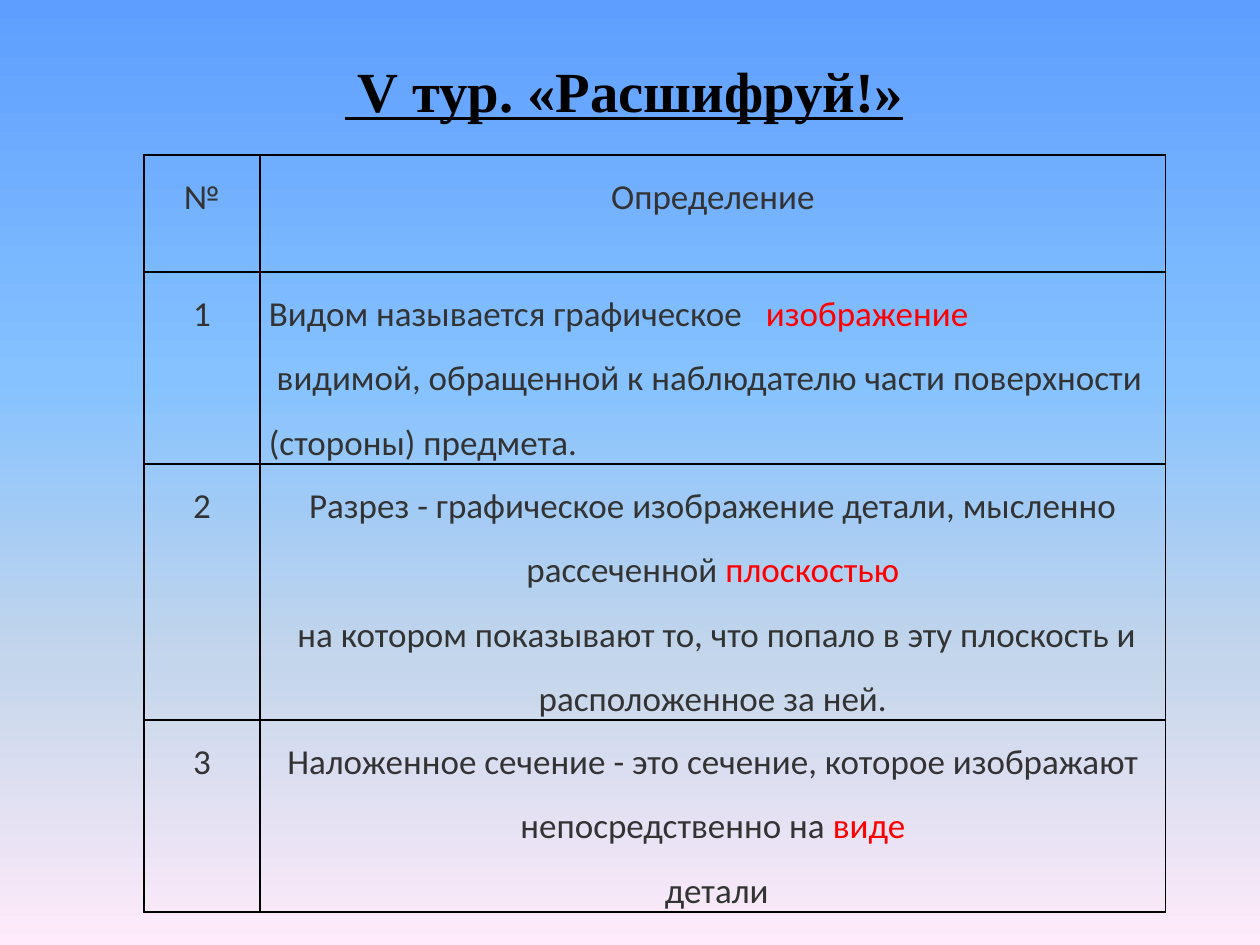
import pptx
import pptx.util
import pptx.dml.color
import pptx.enum.text
import pptx.oxml.ns
import lxml.etree

Cm, Pt = pptx.util.Cm, pptx.util.Pt
RGB = pptx.dml.color.RGBColor
ALIGN = pptx.enum.text.PP_ALIGN
ANCHOR = pptx.enum.text.MSO_ANCHOR
qn = pptx.oxml.ns.qn

BLACK = RGB(0x00, 0x00, 0x00)
GREY = RGB(0x33, 0x33, 0x33)
RED = RGB(0xFF, 0x00, 0x00)
SKY = [(0, RGB(0x5E, 0x9E, 0xFF)), (40, RGB(0x85, 0xC2, 0xFF)),
       (70, RGB(0xC4, 0xD6, 0xEB)), (100, RGB(0xFF, 0xEB, 0xFA))]

HEAD = {"name": "Times New Roman", "size": Pt(32.4), "bold": True, "underline": True}
BODY = {"name": "Calibri", "size": Pt(20)}
BLANK = {**BODY, "underline": True}

LINE = 1.29  # height of one line of text in the table, cm
MID, LEFT = ALIGN.CENTER, ALIGN.LEFT

# Each row: number of lines, then paragraphs of (align, tab stop, runs).
ROWS = [
    ("1", 3, [
        (LEFT, 10.02, [("Видом называется графическое\t", GREY, BODY),
                       ("изображение", RED, BODY)]),
        (LEFT, 9.74, [(" видимой, обращенной к наблюдателю части поверхности "
                       "(стороны) предмета. ", GREY, BODY),
                      ("\t", GREY, BLANK)])]),
    ("2", 4, [
        (MID, None, [("Разрез - графическое изображение детали, мысленно "
                      "рассеченной ", GREY, BODY),
                     ("плоскостью", RED, BODY)]),
        (MID, None, [(" на котором показывают то, что попало в эту плоскость и "
                      "расположенное за ней.", GREY, BODY)])]),
    ("3", 3, [
        (MID, None, [("Наложенное сечение - это сечение, которое изображают "
                      "непосредственно на ", GREY, BODY),
                     ("виде", RED, BODY)]),
        (MID, None, [(" детали", GREY, BODY)])]),
]


def put(obj, vals):
    for key, val in vals.items():
        setattr(obj, key, val)


def add_run(para, text, color, font):
    run = para.add_run()
    run.text = text
    put(run.font, font)
    run.font.color.rgb = color


def add_tab(para, stop):
    tabs = lxml.etree.SubElement(para._p.get_or_add_pPr(), qn("a:tabLst"))
    lxml.etree.SubElement(tabs, qn("a:tab"), pos=str(Cm(stop)), algn="l")


def add_edges(cell):
    """Draw a thin black line on all four sides of the cell."""
    props = cell._tc.get_or_add_tcPr()
    for i, side in enumerate(("a:lnL", "a:lnR", "a:lnT", "a:lnB")):
        edge = props.makeelement(qn(side), {"w": str(Pt(1))})
        fill = lxml.etree.SubElement(edge, qn("a:solidFill"))
        lxml.etree.SubElement(fill, qn("a:srgbClr"), val=str(BLACK))
        props.insert(i, edge)


def fill_cell(cell, paras):
    put(cell, {"margin_left": Cm(0.18), "margin_right": Cm(0.18),
               "margin_top": 0, "margin_bottom": 0,
               "vertical_anchor": ANCHOR.TOP})
    cell.fill.background()
    add_edges(cell)
    frame = cell.text_frame
    for i, (align, stop, runs) in enumerate(paras):
        para = frame.add_paragraph() if i else frame.paragraphs[0]
        put(para, {"alignment": align, "line_spacing": 1.5})
        if stop:
            add_tab(para, stop)
        for run in runs:
            add_run(para, *run)


def add_sky(slide):
    fill = slide.background.fill
    fill.gradient()
    fill.gradient_angle = 270
    stops = slide.element.find(".//" + qn("a:gsLst"))
    for stop in list(stops):
        stops.remove(stop)
    for pos, color in SKY:
        stop = lxml.etree.SubElement(stops, qn("a:gs"), pos=str(pos * 1000))
        lxml.etree.SubElement(stop, qn("a:srgbClr"), val=str(color))


def add_title(slide, x, y, w, h):
    frame = slide.shapes.add_textbox(Cm(x), Cm(y), Cm(w), Cm(h)).text_frame
    put(frame, {"word_wrap": True, "vertical_anchor": ANCHOR.MIDDLE})
    para = frame.paragraphs[0]
    para.alignment = MID
    add_run(para, " V тур. «Расшифруй!»", BLACK, HEAD)


def add_grid(slide, x, y, w, top):
    """Place the table of terms; top is the height of its header row."""
    highs = [top] + [lines * LINE for _, lines, _ in ROWS]
    grid = slide.shapes.add_table(len(highs), 2, Cm(x), Cm(y), Cm(w),
                                  Cm(sum(highs))).table
    put(grid, {"first_row": False, "horz_banding": False})
    first = 2.34
    for col, wide in zip(grid.columns, (first, w - first)):
        col.width = Cm(wide)
    for row, high in zip(grid.rows, highs):
        row.height = Cm(high)

    def plain(text):
        return [(MID, None, [(text, GREY, BODY)])]

    cells = [(plain("№"), plain("Определение"))]
    cells += [(plain(num), paras) for num, _, paras in ROWS]
    for r, pair in enumerate(cells):
        for c, paras in enumerate(pair):
            fill_cell(grid.cell(r, c), paras)


def main():
    deck = pptx.Presentation()
    put(deck, {"slide_width": Cm(25.4), "slide_height": Cm(19.05)})
    slide = deck.slides.add_slide(deck.slide_layouts[6])
    add_sky(slide)
    add_title(slide, 1.78, 0.58, 21.59, 2.46)
    add_grid(slide, 2.9, 3.12, 20.6, 2.36)
    deck.save("out.pptx")


if __name__ == "__main__":
    main()
